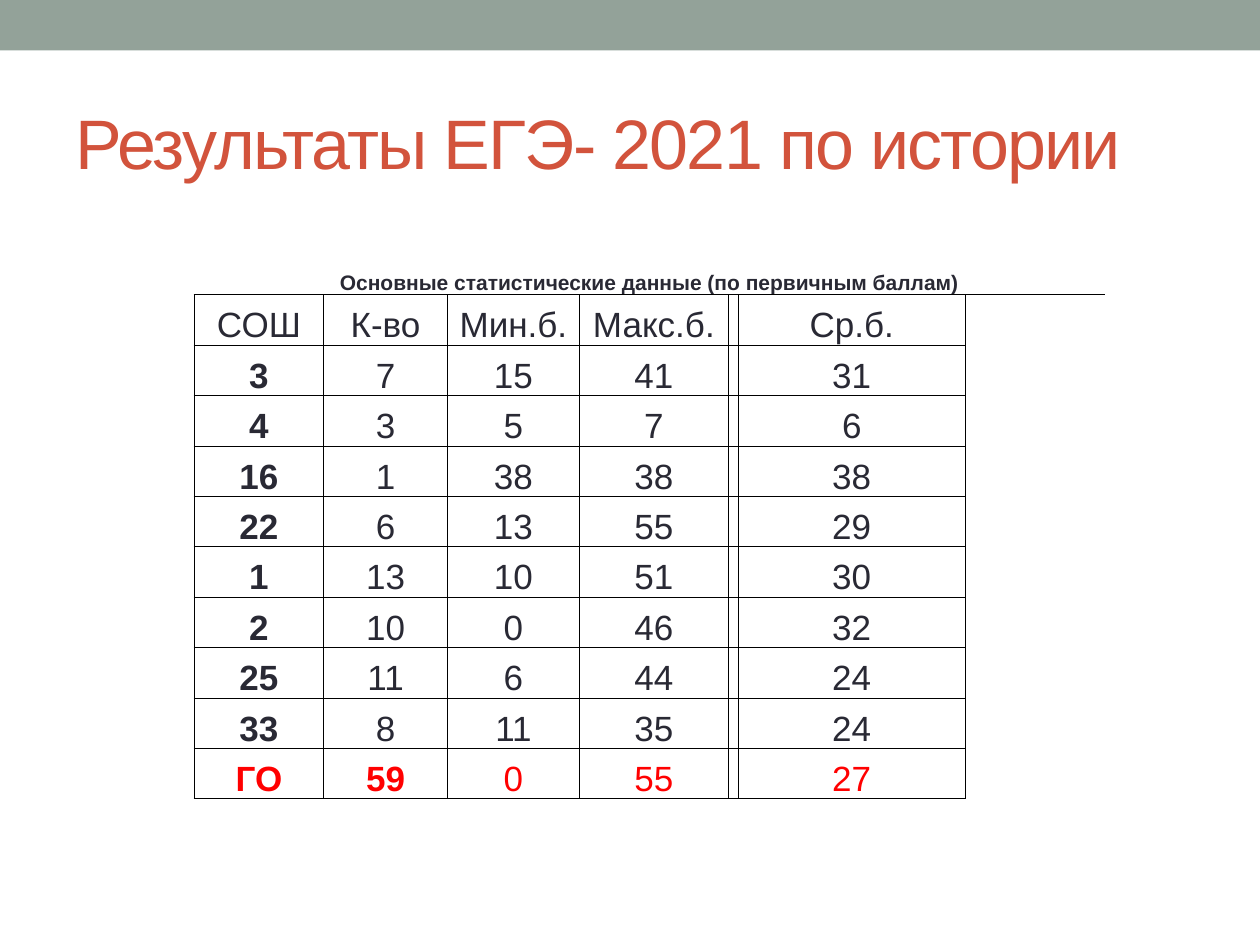
from lxml.etree import SubElement
from pptx import Presentation
from pptx.dml.color import RGBColor
from pptx.enum.shapes import MSO_SHAPE
from pptx.enum.text import MSO_ANCHOR, PP_ALIGN
from pptx.oxml.ns import qn
from pptx.util import Inches, Pt


def style(para, size, color, bold=False):
    font = para.runs[0].font
    font.name, font.size, font.bold = "Arial", Pt(size), bold
    font.color.rgb = RGBColor.from_string(color)


def border(cell):
    props = cell._tc.get_or_add_tcPr()
    for side in ("a:lnL", "a:lnR", "a:lnT", "a:lnB"):
        line = SubElement(props, qn(side), w=str(Pt(0.5)))
        fill = SubElement(line, qn("a:solidFill"))
        SubElement(fill, qn("a:srgbClr"), val="000000")


prs = Presentation()
prs.slide_width, prs.slide_height = Inches(10), Inches(7.5)
slide = prs.slides.add_slide(prs.slide_layouts[6])

# Top band
band = slide.shapes.add_shape(MSO_SHAPE.RECTANGLE, 0, 0, Inches(10), Inches(0.4))
band.shadow.inherit = False
band.fill.solid()
band.fill.fore_color.rgb = RGBColor.from_string("93A299")
band.line.fill.background()

# Title
title = slide.shapes.add_textbox(Inches(0.5), Inches(0.58), Inches(9), Inches(1.08))
frame = title.text_frame
frame.word_wrap = True
frame.vertical_anchor = MSO_ANCHOR.MIDDLE
frame.text = "Результаты ЕГЭ- 2021 по истории"
style(frame.paragraphs[0], 40, "D2533C")
frame.paragraphs[0].runs[0].font._element.set("spc", "-100")

# Results by school
scores = [
    ("СОШ", "К-во", "Мин.б.", "Макс.б.", "Ср.б."),
    (3, 7, 15, 41, 31),
    (4, 3, 5, 7, 6),
    (16, 1, 38, 38, 38),
    (22, 6, 13, 55, 29),
    (1, 13, 10, 51, 30),
    (2, 10, 0, 46, 32),
    (25, 11, 6, 44, 24),
    (33, 8, 11, 35, 24),
    ("ГО", 59, 0, 55, 27),
]
widths = [1.03, 0.98, 1.05, 1.03, 0.15, 0.08, 0.75, 1.05, 1.11]
heights = [0.4, 0.47] + [0.4] * len(scores)
spots = [0, 1, 2, 3, 6]  # columns that hold text
last = len(heights) - 1

# Table grid, with the "No Style, No Grid" table style
table = slide.shapes.add_table(
    len(heights), len(widths), Inches(1.54), Inches(1.47),
    Inches(sum(widths)), Inches(sum(heights))).table
table.first_row = table.horz_banding = False
table._tbl.tblPr.find(qn("a:tableStyleId")).text = "{2D5ABB26-0587-4C30-8999-92F81FD0307C}"
for col, width in zip(table.columns, widths):
    col.width = Inches(width)
for row, height in zip(table.rows, heights):
    row.height = Inches(height)

# Merged cells
table.cell(0, 4).merge(table.cell(0, 6))
table.cell(1, 0).merge(table.cell(1, 8))
for r in range(2, last + 1):
    table.cell(r, 3).merge(table.cell(r, 4))
    table.cell(r, 6).merge(table.cell(r, 7))

# Cell text, borders and fill
texts = {(1, 0): "Основные статистические данные (по первичным баллам)"}
for r, line in enumerate(scores, 2):
    for c, value in zip(spots, line):
        texts[r, c] = str(value)

for r in range(len(heights)):
    for c in range(len(widths)):
        cell = table.cell(r, c)
        cell.margin_left = cell.margin_right = cell.margin_top = Inches(0.01)
        cell.margin_bottom = 0
        cell.vertical_anchor = MSO_ANCHOR.BOTTOM
        if r > 1 and c < 8:
            border(cell)
        cell.fill.background()
        if (r, c) in texts:
            cell.text_frame.text = texts[r, c]
            para = cell.text_frame.paragraphs[0]
            para.alignment = PP_ALIGN.CENTER
            bold = r == 1 or (c == 0 and r > 2) or (r, c) == (last, 1)
            style(para, 12 if r == 1 else 20, "FF0000" if r == last else "292934", bold)

prs.save("out.pptx")
